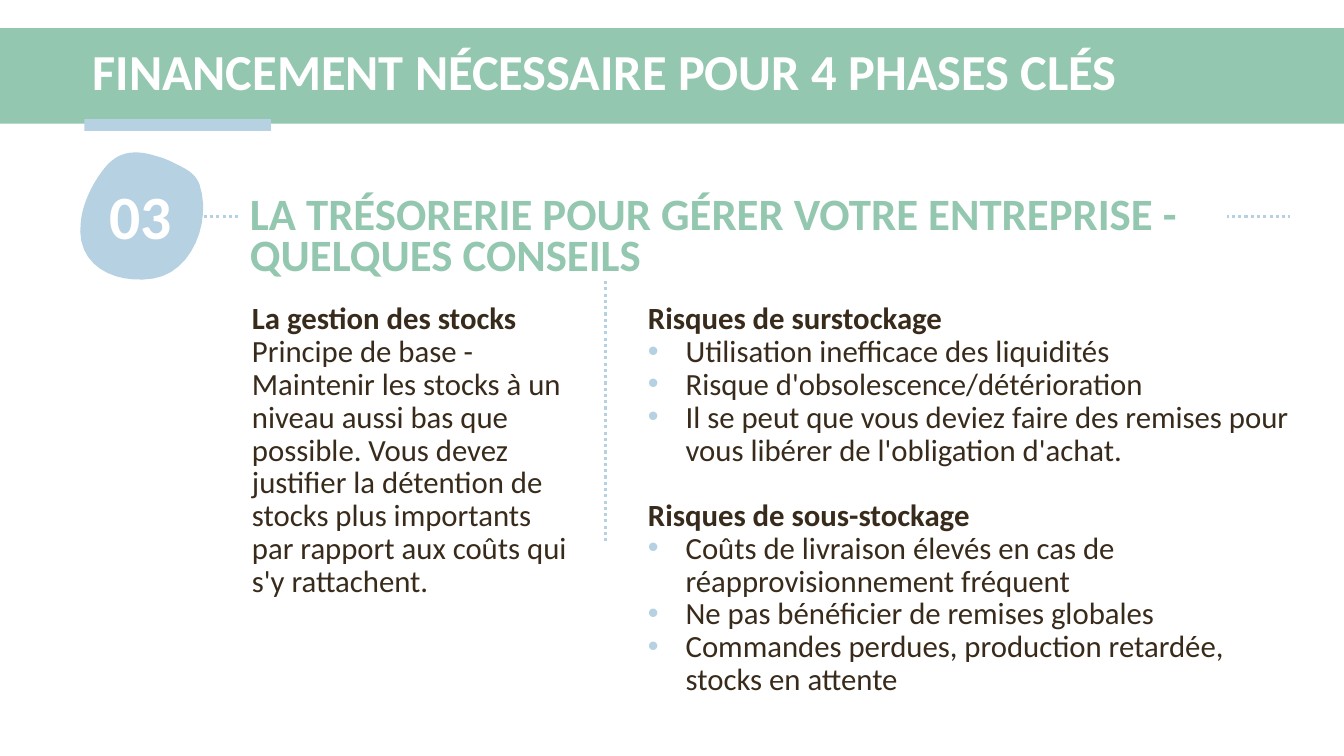
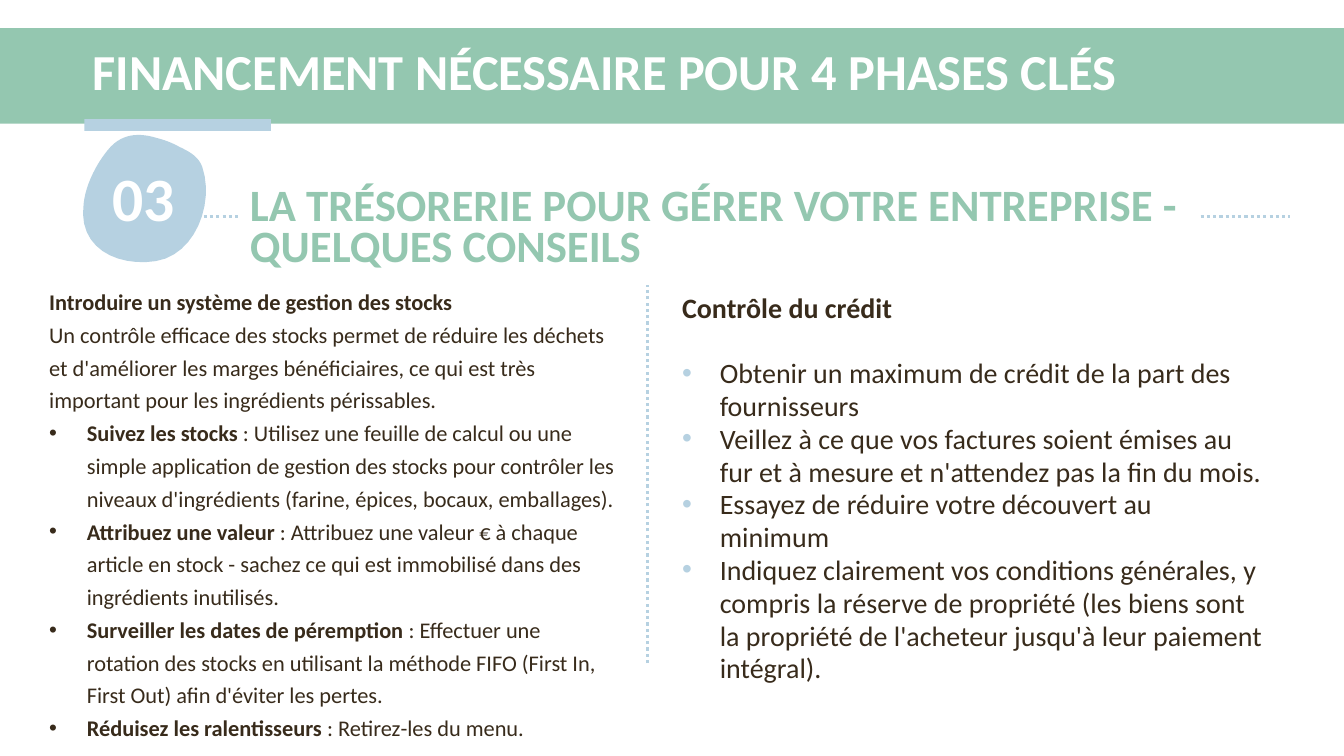
from dataclasses import dataclass

import lxml.etree
import pptx
import pptx.dml.color
import pptx.enum.dml
import pptx.enum.shapes
import pptx.enum.text
import pptx.oxml.ns
import pptx.util

Cm = pptx.util.Cm
Pt = pptx.util.Pt

COLOURS = {
    "green": "94C7B0",
    "blue": "B6D1E1",
    "brown": "382B1B",
    "white": "FFFFFF",
}
FONT = "Calibri"
BODY_LEADING = Pt(23.4)
TITLE = "FINANCEMENT NÉCESSAIRE POUR 4 PHASES CLÉS"
HEADING = "LA TRÉSORERIE POUR GÉRER VOTRE ENTREPRISE - QUELQUES CONSEILS"

# Badge outline in cm from its corner: a start, then cubic curves
BADGE_START = (1.88, 0.08)
BADGE_CURVES = [
    ((1.47, -0.05), (1.04, -0.05), (0.71, 0.3)),
    ((0.38, 0.66), (0.08, 1.24), (0.03, 1.73)),
    ((-0.13, 2.84), (0.86, 3.33), (1.85, 3.18)),
    ((2.84, 3.02), (3.33, 1.73), (3.02, 0.81)),
    ((2.92, 0.53), (2.67, 0.41), (2.44, 0.3)),
    ((2.26, 0.2), (2.08, 0.13), BADGE_START),
]
CURVE_STEPS = 12


@dataclass
class Entry:
    text: str
    lead: str = ""
    bold: bool = False
    bullet: bool = False
    gap: bool = False


def rgb(name):
    return pptx.dml.color.RGBColor.from_string(COLOURS[name])


def style_font(font, size, colour, bold):
    font.name = FONT
    font.size = Pt(size)
    font.bold = bold
    font.color.rgb = rgb(colour)


def fill_shape(shape, colour):
    shape.shadow.inherit = False
    shape.fill.solid()
    shape.fill.fore_color.rgb = rgb(colour)
    shape.line.fill.background()


def add_rectangle(page, left, top, width, height, colour):
    shape = page.shapes.add_shape(
        pptx.enum.shapes.MSO_SHAPE.RECTANGLE,
        Cm(left), Cm(top), Cm(width), Cm(height))
    fill_shape(shape, colour)
    return shape


def add_dotted_line(page, left, top, right, bottom):
    line = page.shapes.add_connector(
        pptx.enum.shapes.MSO_CONNECTOR.STRAIGHT,
        Cm(left), Cm(top), Cm(right), Cm(bottom))
    line.line.color.rgb = rgb("blue")
    line.line.width = Pt(2.25)
    line.line.dash_style = pptx.enum.dml.MSO_LINE.ROUND_DOT
    properties = line.element.spPr
    lxml.etree.SubElement(properties, pptx.oxml.ns.qn("a:effectLst"))


def add_bands(page, layout):
    """Draw the title bands and hand them to the layout that all pages share."""
    band = add_rectangle(page, 0, 0.71, 33.87, 2.41, "green")
    underline = add_rectangle(page, 2.13, 3, 4.7, 0.3, "blue")
    for index, shape in enumerate((band, underline), start=2):
        layout.shapes.element.insert(index, shape.element)


def set_title(page):
    title = page.shapes.title
    title.left, title.top = Cm(2.08), Cm(0.86)
    title.width, title.height = Cm(30.28), Cm(2.01)
    frame = title.text_frame
    frame.text = TITLE
    frame.auto_size = pptx.enum.text.MSO_AUTO_SIZE.NONE
    frame.vertical_anchor = pptx.enum.text.MSO_ANCHOR.MIDDLE
    para = frame.paragraphs[0]
    para.alignment = pptx.enum.text.PP_ALIGN.LEFT
    para.line_spacing = 0.9
    style_font(para.font, 36, "white", True)


def add_heading(page, top, width):
    """Dotted rule, interrupted by the white box of the heading."""
    add_dotted_line(page, 2.29, 5.46, 32.51, 5.46)
    box = add_rectangle(page, 6.05, top, width, 1.22, "white")
    frame = box.text_frame
    frame.word_wrap = True
    frame.vertical_anchor = pptx.enum.text.MSO_ANCHOR.TOP
    para = frame.paragraphs[0]
    para.text = HEADING
    para.alignment = pptx.enum.text.PP_ALIGN.LEFT
    para.line_spacing = Pt(29.4)
    style_font(para.font, 32, "green", True)


def curve_points(start, curves):
    for first, second, end in curves:
        for step in range(1, CURVE_STEPS + 1):
            t = step / CURVE_STEPS
            weights = ((1 - t) ** 3, 3 * t * (1 - t) ** 2,
                       3 * t ** 2 * (1 - t), t ** 3)
            corners = (start, first, second, end)
            yield tuple(sum(weight * corner[axis]
                            for weight, corner in zip(weights, corners))
                        for axis in (0, 1))
        start = end


def add_badge(page, left, top, number):
    group = page.shapes.add_group_shape()
    builder = group.shapes.build_freeform(
        Cm(left + BADGE_START[0]), Cm(top + BADGE_START[1]))
    builder.add_line_segments(
        [(Cm(left + x), Cm(top + y))
         for x, y in curve_points(BADGE_START, BADGE_CURVES)], close=True)
    fill_shape(builder.convert_to_shape(), "blue")

    box = group.shapes.add_textbox(Cm(left), Cm(top + 1.55), Cm(3.07), Cm(2.57))
    box.text_frame.word_wrap = True
    para = box.text_frame.paragraphs[0]
    para.text = number
    para.alignment = pptx.enum.text.PP_ALIGN.CENTER
    para.line_spacing = BODY_LEADING
    style_font(para.font, 44, "white", True)


def add_bullet(para, colour):
    properties = para._p.get_or_add_pPr()
    properties.set("marL", str(Cm(0.95)))
    properties.set("indent", str(-Cm(0.95)))
    qn = pptx.oxml.ns.qn
    holder = lxml.etree.SubElement(properties, qn("a:buClr"))
    lxml.etree.SubElement(holder, qn("a:srgbClr"), val=COLOURS[colour])
    lxml.etree.SubElement(properties, qn("a:buFont"), typeface="Arial")
    lxml.etree.SubElement(properties, qn("a:buChar"), char="•")


def add_column(page, left, top, width, size, entries, bullet_colour="blue"):
    box = page.shapes.add_textbox(Cm(left), Cm(top), Cm(width), Cm(9.6))
    frame = box.text_frame
    frame.word_wrap = True
    for index, entry in enumerate(entries):
        para = frame.add_paragraph() if index else frame.paragraphs[0]
        if entry.bullet:
            add_bullet(para, bullet_colour)
        para.line_spacing = BODY_LEADING
        if entry.gap:
            para.space_before = BODY_LEADING
        style_font(para.font, size, "brown", entry.bold)
        if entry.lead:
            span = para.add_run()
            span.text = entry.lead
            span.font.bold = True
        para.add_run().text = entry.text


def add_stock_page(page):
    set_title(page)
    add_heading(page, 4.88, 24.87)
    add_badge(page, 2.01, 3.84, "03")
    add_column(page, 6.1, 7.52, 8.56, 22, [
        Entry("La gestion des stocks", bold=True),
        Entry("Principe de base - Maintenir les stocks à un niveau aussi bas "
              "que possible. Vous devez justifier la détention de stocks plus "
              "importants par rapport aux coûts qui s'y rattachent."),
    ])
    add_column(page, 16.08, 7.52, 16.71, 22, [
        Entry("Risques de surstockage", bold=True),
        Entry("Utilisation inefficace des liquidités", bullet=True),
        Entry("Risque d'obsolescence/détérioration", bullet=True),
        Entry("Il se peut que vous deviez faire des remises pour vous libérer "
              "de l'obligation d'achat.", bullet=True),
        Entry("Risques de sous-stockage", bold=True, gap=True),
        Entry("Coûts de livraison élevés en cas de réapprovisionnement "
              "fréquent", bullet=True),
        Entry("Ne pas bénéficier de remises globales", bullet=True),
        Entry("Commandes perdues, production retardée, stocks en attente",
              bullet=True),
    ])
    add_dotted_line(page, 15.27, 13.64, 15.27, 7.04)


def add_credit_page(page):
    set_title(page)
    add_heading(page, 4.65, 24.18)
    add_badge(page, 2.08, 3.4, "03")
    add_column(page, 0.99, 6.99, 14.81, 16, [
        Entry("Introduire un système de gestion des stocks", bold=True),
        Entry("Un contrôle efficace des stocks permet de réduire les déchets "
              "et d'améliorer les marges bénéficiaires, ce qui est très "
              "important pour les ingrédients périssables."),
        Entry(": Utilisez une feuille de calcul ou une simple application de "
              "gestion des stocks pour contrôler les niveaux d'ingrédients "
              "(farine, épices, bocaux, emballages).",
              lead="Suivez les stocks ", bullet=True),
        Entry(": Attribuez une valeur € à chaque article en stock - sachez ce "
              "qui est immobilisé dans des ingrédients inutilisés.",
              lead="Attribuez une valeur ", bullet=True),
        Entry(": Effectuer une rotation des stocks en utilisant la méthode "
              "FIFO (First In, First Out) afin d'éviter les pertes.",
              lead="Surveiller les dates de péremption ", bullet=True),
        Entry(": Retirez-les du menu.",
              lead="Réduisez les ralentisseurs ", bullet=True),
    ], bullet_colour="brown")
    add_column(page, 16.94, 7.21, 15.19, 20, [
        Entry("Contrôle du crédit", bold=True),
        Entry("Obtenir un maximum de crédit de la part des fournisseurs",
              bullet=True, gap=True),
        Entry("Veillez à ce que vos factures soient émises au fur et à mesure "
              "et n'attendez pas la fin du mois.", bullet=True),
        Entry("Essayez de réduire votre découvert au minimum", bullet=True),
        Entry("Indiquez clairement vos conditions générales, y compris la "
              "réserve de propriété (les biens sont la propriété de "
              "l'acheteur jusqu'à leur paiement intégral).", bullet=True),
    ])
    add_dotted_line(page, 16.31, 16.71, 16.31, 7.19)


def main():
    deck = pptx.Presentation()
    deck.slide_width, deck.slide_height = Cm(33.87), Cm(19.05)
    layout = deck.slide_layouts.get_by_name("Title Only")
    stock_page, credit_page = [deck.slides.add_slide(layout) for _ in range(2)]
    add_bands(stock_page, layout)
    add_stock_page(stock_page)
    add_credit_page(credit_page)
    deck.save("out.pptx")


if __name__ == "__main__":
    main()
